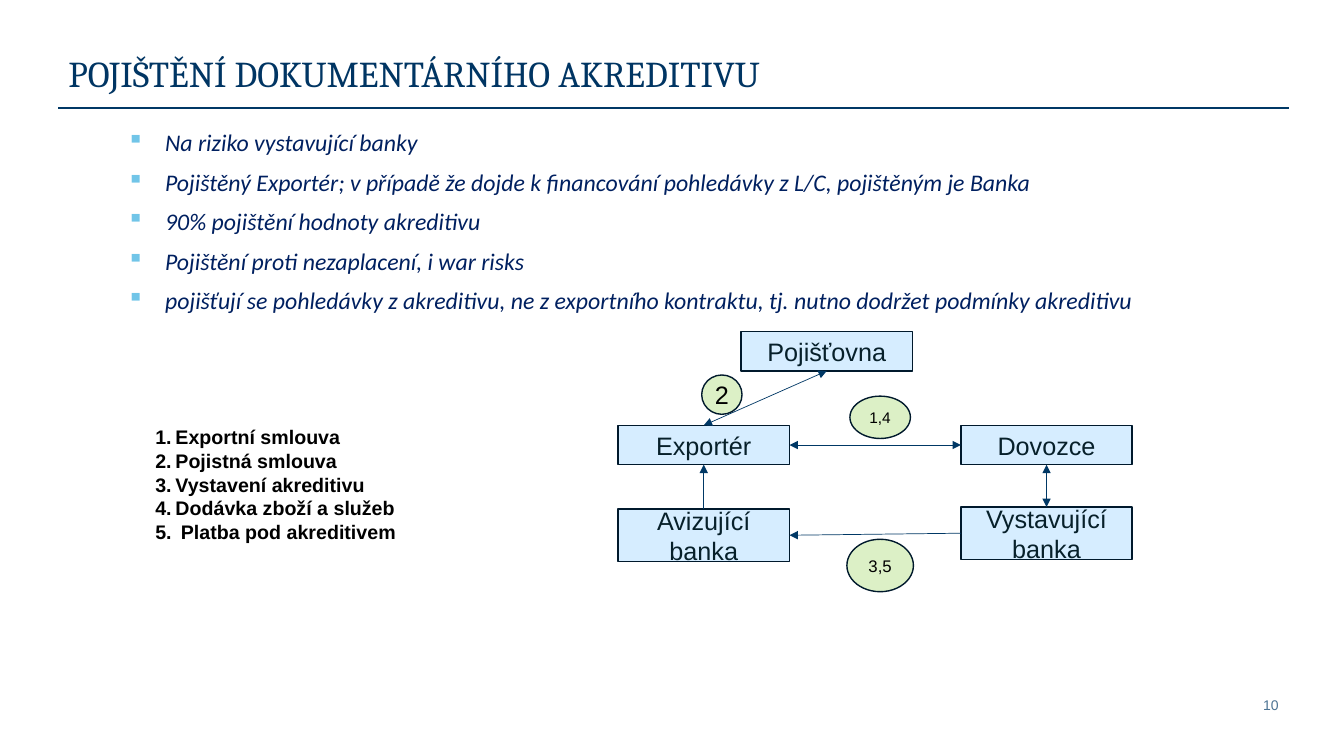
from dataclasses import dataclass

import lxml.etree
import pptx
import pptx.dml.color
import pptx.enum.shapes
import pptx.enum.text
import pptx.oxml.ns
import pptx.util

Inches = pptx.util.Inches
Pt = pptx.util.Pt
qn = pptx.oxml.ns.qn
Align = pptx.enum.text.PP_ALIGN
Anchor = pptx.enum.text.MSO_ANCHOR
Preset = pptx.enum.shapes.MSO_SHAPE

RULE_BLUE = "003865"
OUTLINE = "00192C"
BULLET_BLUE = "71C5E8"
TOP, LEFT, BOTTOM, RIGHT = range(4)  # connection sites of a rectangle


@dataclass
class TextStyle:
    size: float
    color: str
    font: str = "Arial"
    bold: bool = False
    italic: bool = False


@dataclass
class Node:
    text: str
    left: float
    top: float
    width: float
    height: float
    size: float = 18


@dataclass
class Arrow:
    start: str
    start_site: int
    end: str
    end_site: int
    both_ways: bool = True


POINTS = [
    "Na riziko vystavující banky",
    "Pojištěný Exportér; v případě že dojde k financování pohledávky z L/C, pojištěným je Banka",
    "90% pojištění hodnoty akreditivu",
    "Pojištění proti nezaplacení, i war risks",
    "pojišťují se pohledávky z akreditivu, ne z exportního kontraktu, tj. nutno dodržet podmínky akreditivu",
]
STEPS = [
    "Exportní smlouva",
    "Pojistná smlouva",
    "Vystavení akreditivu",
    "Dodávka zboží a služeb",
    " Platba pod akreditivem",
]
PARTIES = [
    Node("Exportér", 6.13, 4.22, 1.7, 0.39),
    Node("Avizující banka", 6.13, 5.05, 1.7, 0.52),
    Node("Dovozce", 9.53, 4.22, 1.7, 0.39),
    Node("Pojišťovna", 7.35, 3.29, 1.7, 0.39),
    Node("Vystavující banka", 9.53, 5.03, 1.7, 0.52),
]
ARROWS = [
    Arrow("Dovozce", LEFT, "Exportér", RIGHT),
    Arrow("Pojišťovna", BOTTOM, "Exportér", TOP),
    Arrow("Vystavující banka", TOP, "Dovozce", BOTTOM),
    Arrow("Vystavující banka", LEFT, "Avizující banka", RIGHT, both_ways=False),
    Arrow("Avizující banka", TOP, "Exportér", BOTTOM, both_ways=False),
]
STEP_MARKS = [
    Node("2", 6.96, 3.72, 0.4, 0.39),
    Node("1,4", 8.43, 3.93, 0.6, 0.42, 11),
    Node("3,5", 8.4, 5.35, 0.66, 0.52, 12),
]


def rgb(value: str) -> pptx.dml.color.RGBColor:
    return pptx.dml.color.RGBColor.from_string(value)


def style_text(text_frame, style: TextStyle, align=Align.LEFT) -> None:
    for paragraph in text_frame.paragraphs:
        paragraph.alignment = align
        for run in paragraph.runs:
            font = run.font
            font.name, font.size = style.font, Pt(style.size)
            font.bold, font.italic = style.bold, style.italic
            font.color.rgb = rgb(style.color)


def add_text(slide, lines: list[str], left: float, top: float, width: float,
             height: float, style: TextStyle, align=Align.LEFT):
    box = slide.shapes.add_textbox(Inches(left), Inches(top), Inches(width), Inches(height))
    text_frame = box.text_frame
    text_frame.word_wrap = True
    text_frame.text = "\n".join(lines)
    style_text(text_frame, style, align)
    return text_frame


def add_marker(paragraph, margin: float, hanging: float, tag: str, **attributes: str):
    properties = paragraph._p.get_or_add_pPr()
    properties.set("marL", str(Inches(margin)))
    properties.set("indent", str(-Inches(hanging)))
    lxml.etree.SubElement(properties, qn(tag), attributes)
    return properties


def add_node(slide, node: Node, preset, fill: str, color: str):
    shape = slide.shapes.add_shape(preset, Inches(node.left), Inches(node.top),
                                   Inches(node.width), Inches(node.height))
    shape.shadow.inherit = False
    shape.fill.solid()
    shape.fill.fore_color.rgb = rgb(fill)
    shape.line.color.rgb = rgb(OUTLINE)
    shape.line.width = Pt(1)
    shape.text_frame.text = node.text
    shape.text_frame.word_wrap = preset == Preset.RECTANGLE
    shape.text_frame.vertical_anchor = Anchor.MIDDLE
    style_text(shape.text_frame, TextStyle(node.size, color), Align.CENTER)
    return shape


def add_line(slide, start: tuple[float, float], end: tuple[float, float], width: float):
    connector = slide.shapes.add_connector(
        pptx.enum.shapes.MSO_CONNECTOR.STRAIGHT,
        *(Inches(value) for value in (*start, *end)))
    connector.line.color.rgb = rgb(RULE_BLUE)
    connector.line.width = Pt(width)
    lxml.etree.SubElement(connector._element.spPr, qn("a:effectLst"))
    return connector


def add_arrow(slide, arrow: Arrow, boxes: dict) -> None:
    connector = add_line(slide, (0, 0), (1, 1), 0.5)
    connector.begin_connect(boxes[arrow.start], arrow.start_site)
    connector.end_connect(boxes[arrow.end], arrow.end_site)
    line = connector.line._get_or_add_ln()
    for tag in ["a:headEnd", "a:tailEnd"] if arrow.both_ways else ["a:tailEnd"]:
        lxml.etree.SubElement(line, qn(tag), type="triangle")


def main() -> None:
    presentation = pptx.Presentation()
    presentation.slide_width, presentation.slide_height = Inches(13.33), Inches(7.5)
    slide = presentation.slides.add_slide(presentation.slide_layouts[6])

    # Title, rule and page number
    title = add_text(slide, ["POJIŠTĚNÍ DOKUMENTÁRNÍHO AKREDITIVU"], 0.58, 0.51, 12.2, 0.67,
                     TextStyle(26, "003563", "Cambria"))
    title.paragraphs[0].line_spacing = 0.9
    add_line(slide, (0.58, 1.07), (12.78, 1.07), 1.75)
    page_number = add_text(slide, ["10"], 9.69, 6.79, 3.09, 0.4,
                           TextStyle(10, "4C7393"), Align.RIGHT)
    page_number.vertical_anchor = Anchor.MIDDLE

    # Bulleted points
    points = add_text(slide, POINTS, 0.58, 1.18, 11.8, 2.76,
                      TextStyle(17, "002060", "Calibri", italic=True))
    for index, paragraph in enumerate(points.paragraphs):
        paragraph.level = 1
        properties = add_marker(paragraph, 0.96, 0.38, "a:buChar", char="▪")
        bullet_color = lxml.etree.Element(qn("a:buClr"))
        lxml.etree.SubElement(bullet_color, qn("a:srgbClr"), val=BULLET_BLUE)
        properties.insert(0, bullet_color)
        paragraph.line_spacing = 1.14
        paragraph.space_before = Pt(5 if index else 0)

    # Numbered steps
    steps = add_text(slide, STEPS, 1.54, 4.22, 3.41, 1.18, TextStyle(14, "000000", bold=True))
    steps.margin_left = steps.margin_right = steps.margin_top = steps.margin_bottom = 0
    for paragraph in steps.paragraphs:
        add_marker(paragraph, 0.2, 0.2, "a:buAutoNum", type="arabicPeriod")

    # Diagram of parties, links and step marks
    boxes = {party.text: add_node(slide, party, Preset.RECTANGLE, "D6EDFF", "07202A")
             for party in PARTIES}
    for arrow in ARROWS:
        add_arrow(slide, arrow, boxes)
    for mark in STEP_MARKS:
        add_node(slide, mark, Preset.OVAL, "DCF0C6", "000000")

    presentation.save("out.pptx")


if __name__ == "__main__":
    main()
